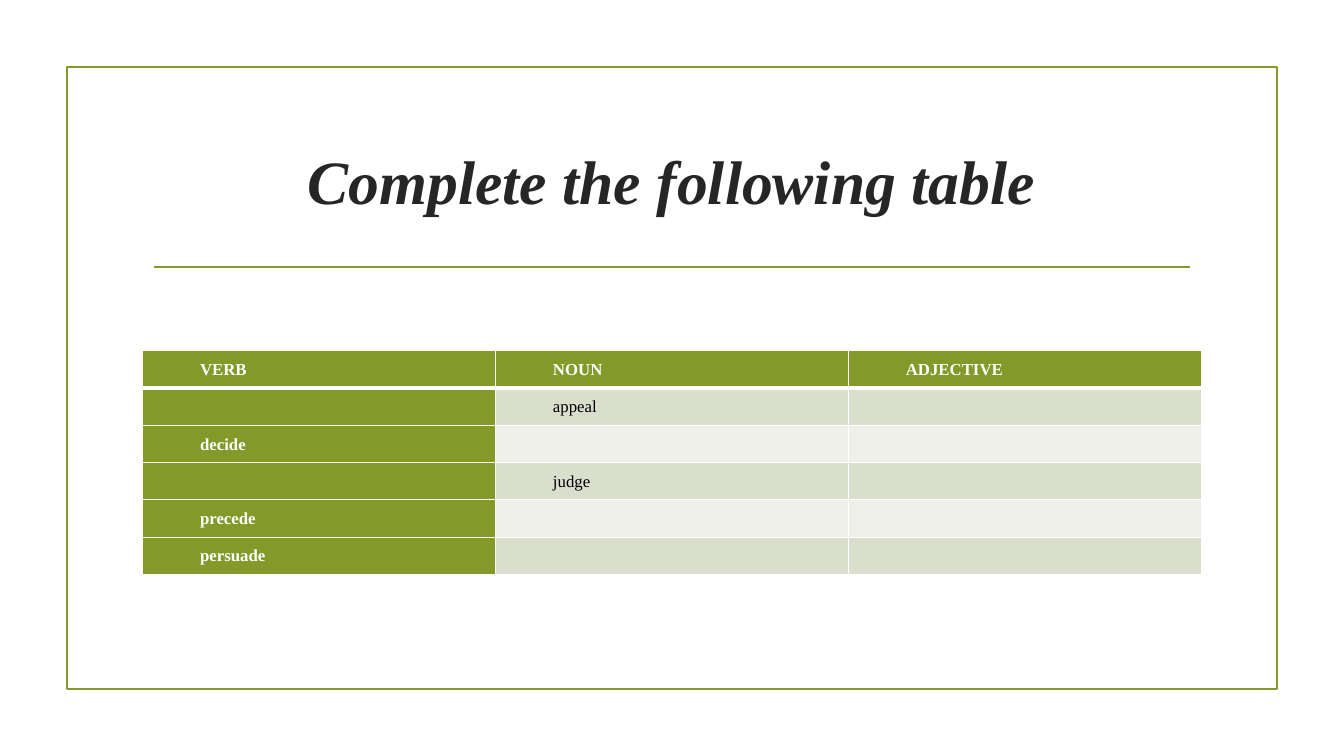
import pptx
import pptx.util
import pptx.dml.color
import pptx.enum.shapes
import pptx.enum.text
import pptx.oxml.ns
from lxml import etree

W, H = 13.33, 7.5
FONT = "Times New Roman"
GREEN, WHITE, INK, BLACK = "83992A", "FFFFFF", "262626", "000000"
BANDS = ["D9DECD", "EDEFE8"]
ROWS = [
    ["VERB", "NOUN", "ADJECTIVE"],
    ["", "appeal", ""],
    ["decide", "", ""],
    ["", "judge", ""],
    ["precede", "", ""],
    ["persuade", "", ""],
]
inch = pptx.util.Inches


def color(hex_value):
    return pptx.dml.color.RGBColor.from_string(hex_value)


def sub(parent, tag, **attrs):
    return etree.SubElement(parent, pptx.oxml.ns.qn(tag), **attrs)


def style(font, size, hex_value, bold, italic=False):
    font.name, font.size = FONT, pptx.util.Pt(size)
    font.bold, font.italic = bold, italic
    font.color.rgb = color(hex_value)


def add_frame(s, x, y, w, h):
    # Border around the slide content
    sp = s.shapes.add_shape(pptx.enum.shapes.MSO_SHAPE.RECTANGLE,
                            inch(x), inch(y), inch(w), inch(h))
    sp.shadow.inherit = False
    sp.fill.background()
    sp.line.color.rgb = color(GREEN)
    sp.line.width = pptx.util.Pt(1.25)


def add_title(s, x, y, w, h, text):
    # Heading
    tf = s.shapes.add_textbox(inch(x), inch(y), inch(w), inch(h)).text_frame
    tf.word_wrap = True
    tf.vertical_anchor = pptx.enum.text.MSO_ANCHOR.MIDDLE
    p = tf.paragraphs[0]
    p.text = text
    p.alignment = pptx.enum.text.PP_ALIGN.CENTER
    style(p.runs[0].font, 44, INK, True, True)

    # Rule below the heading
    inset, rule_y = 0.11, inch(y + h + 0.15)
    rule = s.shapes.add_connector(pptx.enum.shapes.MSO_CONNECTOR.STRAIGHT,
                                  inch(x + inset), rule_y, inch(x + w - inset), rule_y)
    rule.line.color.rgb = color(GREEN)
    rule.line.width = pptx.util.Pt(1.25)
    sub(rule._element.spPr, "a:effectLst")


def add_borders(cell, bottom):
    tcPr = cell._tc.get_or_add_tcPr()
    for side, points in (("L", 1), ("R", 1), ("T", 1), ("B", bottom)):
        ln = sub(tcPr, "a:ln" + side, w=str(pptx.util.Pt(points)))
        sub(sub(ln, "a:solidFill"), "a:srgbClr", val=WHITE)


def fill_cell(cell, text, heading, fill, bottom):
    add_borders(cell, bottom)
    cell.fill.solid()
    cell.fill.fore_color.rgb = color(fill)
    cell.margin_left = cell.margin_right = inch(0.07)
    cell.margin_top = cell.margin_bottom = inch(0.07)
    p = cell.text_frame.paragraphs[0]
    p.text = text
    p.alignment = pptx.enum.text.PP_ALIGN.JUSTIFY
    p.line_spacing = 1.15
    pPr = p._p.get_or_add_pPr()
    pPr.set("marL", str(inch(0.5)))
    pPr.set("indent", "0")
    for r in p.runs:
        style(r.font, 12, WHITE if heading else BLACK, heading)
    if not text:
        # Keeps blank cells at the row height
        sub(p._p, "a:endParaRPr", sz="1200")


def add_word_table(s, x, y, w, h, rows):
    table = s.shapes.add_table(len(rows), len(rows[0]),
                               inch(x), inch(y), inch(w), inch(h)).table
    for i, row in enumerate(rows):
        for j, text in enumerate(row):
            heading = i == 0 or j == 0
            fill = GREEN if heading else BANDS[(i - 1) % 2]
            fill_cell(table.cell(i, j), text, heading, fill, 3 if i == 0 else 1)
            if i == 1:
                # Same heavy rule seen from the row below the header
                top = table.cell(i, j)._tc.tcPr.find(pptx.oxml.ns.qn("a:lnT"))
                top.set("w", str(pptx.util.Pt(3)))


def main():
    prs = pptx.Presentation()
    prs.slide_width, prs.slide_height = inch(W), inch(H)
    s = prs.slides.add_slide(prs.slide_layouts[6])
    margin, body = 0.665, 10.5
    left = (W - body) / 2
    add_frame(s, margin, margin, W - 2 * margin, H - 2 * margin)
    add_title(s, left, 1.07, body, 1.43, "Complete the following table")
    add_word_table(s, left, 3.48, body, 2.14, ROWS)
    prs.save("out.pptx")


if __name__ == "__main__":
    main()
